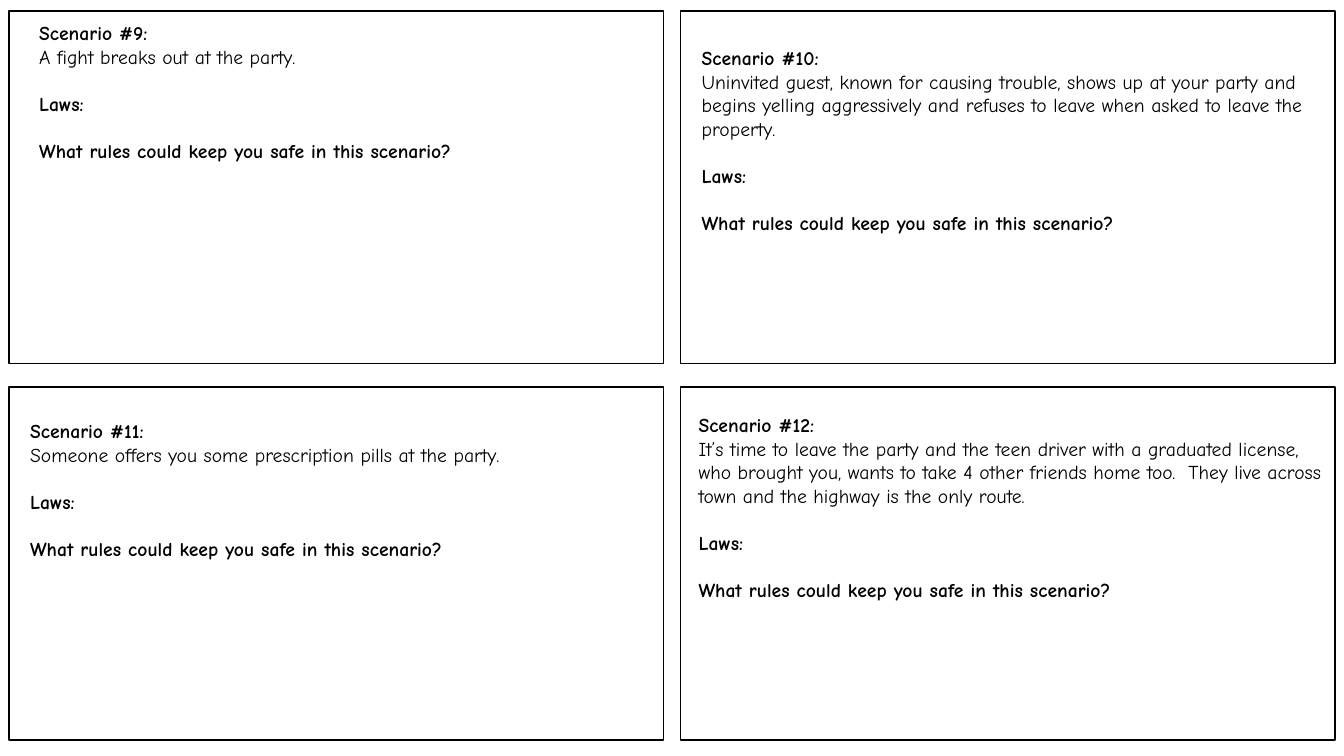
from pptx import Presentation
from pptx.dml.color import RGBColor
from pptx.enum.shapes import MSO_SHAPE
from pptx.enum.text import MSO_AUTO_SIZE, PP_ALIGN
from pptx.util import Inches, Pt

SCENARIOS = [
    ("Scenario #9:", "A fight breaks out at the party.", (0.29, 0.16), 1.51),
    ("Scenario #10:",
     "Uninvited guest, known for causing trouble, shows up at your party and "
     "begins yelling aggressively and refuses to leave when asked to leave "
     "the property.", (6.86, 0.41), 1.99),
    ("Scenario #11:", "Someone offers you some prescription pills at the party.",
     (0.2, 4.11), 1.51),
    ("Scenario #12:",
     "It’s time to leave the party and the teen driver with a graduated "
     "license, who brought you, wants to take 4 other friends home too.  They "
     "live across town and the highway is the only route.", (6.83, 4.05), 1.99),
]
PROMPTS = ["Laws:", "What rules could keep you safe in this scenario?"]

FONT = "Comic Neue"
BLACK, WHITE = "000000", "FFFFFF"
CARD_LEFT, CARD_TOP = 0.09, 0.11
CARD_WIDTH, CARD_HEIGHT = 6.49, 3.5
COLUMN_STEP, ROW_STEP = 6.66, 3.73
TEXT_WIDTH = 6.38
BLANK_LINE = 16.9


def color(value):
    return RGBColor.from_string(value)


def write(paragraph, text, bold=False, gap=0, size=14, fill=BLACK):
    paragraph.alignment = PP_ALIGN.LEFT
    paragraph.space_before = Pt(gap)
    run = paragraph.add_run()
    run.text = text
    run.font.name = FONT
    run.font.size = Pt(size)
    run.font.bold = bold
    run.font.color.rgb = color(fill)


def add_card(slide, row, column):
    card = slide.shapes.add_shape(
        MSO_SHAPE.RECTANGLE,
        Inches(CARD_LEFT + column * COLUMN_STEP),
        Inches(CARD_TOP + row * ROW_STEP),
        Inches(CARD_WIDTH), Inches(CARD_HEIGHT))
    card.shadow.inherit = False
    card.fill.solid()
    card.fill.fore_color.rgb = color(WHITE)
    card.line.color.rgb = color(BLACK)
    card.line.width = Pt(1)


def add_scenario(slide, title, situation, position, height):
    left, top = position
    frame = slide.shapes.add_textbox(
        Inches(left), Inches(top), Inches(TEXT_WIDTH), Inches(height)).text_frame
    frame.word_wrap = True
    frame.auto_size = MSO_AUTO_SIZE.SHAPE_TO_FIT_TEXT
    write(frame.paragraphs[0], title, bold=True)
    write(frame.add_paragraph(), situation)
    for prompt in PROMPTS:
        write(frame.add_paragraph(), prompt, bold=True, gap=BLANK_LINE)


def main():
    deck = Presentation()
    deck.slide_width, deck.slide_height = Inches(13.33), Inches(7.5)
    slide = deck.slides.add_slide(deck.slide_layouts[6])
    for index, scenario in enumerate(SCENARIOS):
        add_card(slide, *divmod(index, 2))
        add_scenario(slide, *scenario)
    deck.save("out.pptx")


if __name__ == "__main__":
    main()
